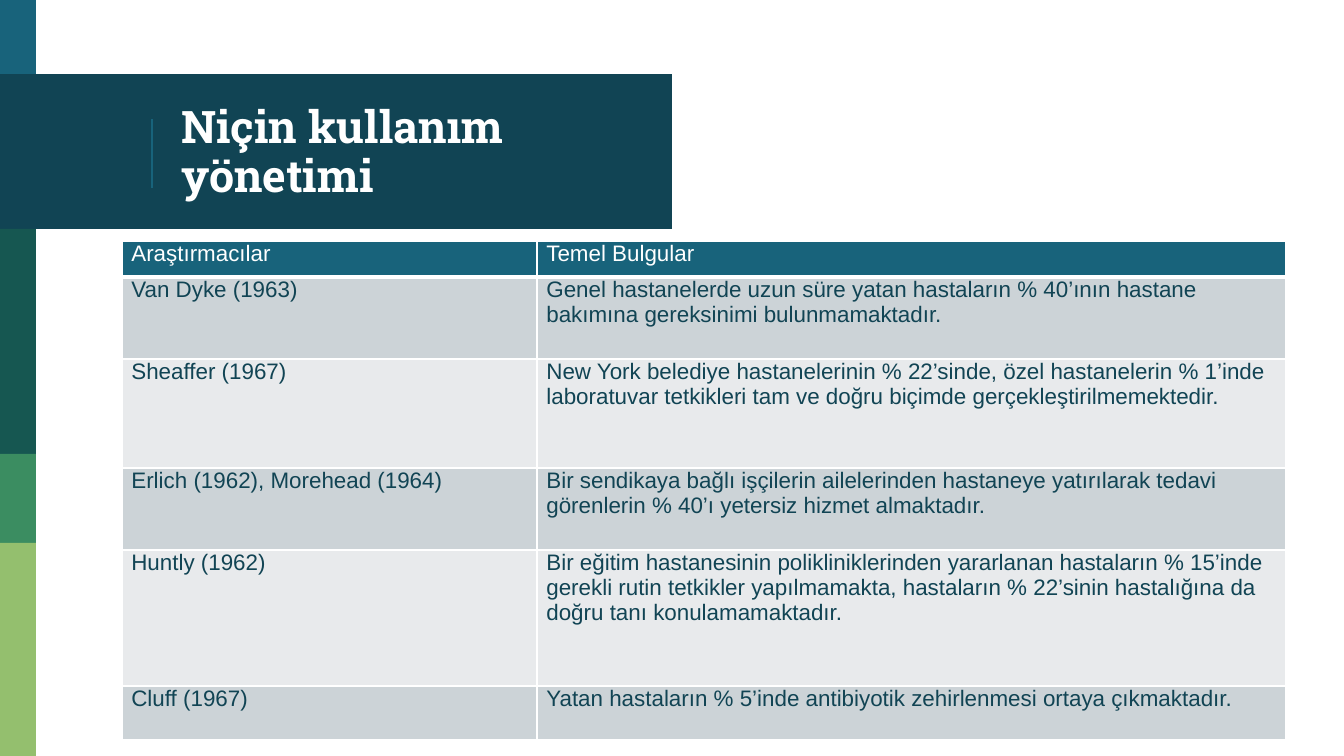
from lxml import etree
from pptx import Presentation
from pptx import util as u
from pptx.dml.color import RGBColor
from pptx.enum import shapes, text
from pptx.oxml.ns import qn

BLUE = RGBColor(0x18, 0x63, 0x7B)
NAVY = RGBColor(0x11, 0x44, 0x54)
PINE = RGBColor(0x16, 0x57, 0x51)
GREEN = RGBColor(0x3B, 0x8D, 0x61)
LIME = RGBColor(0x94, 0xBF, 0x6E)
WHITE = RGBColor(0xFF, 0xFF, 0xFF)
BAND_DARK = RGBColor(0xCC, 0xD3, 0xD7)
BAND_LIGHT = RGBColor(0xE8, 0xEA, 0xEC)

# Content
TITLE = "Niçin kullanım yönetimi"
ROWS = [
    ("Araştırmacılar", "Temel Bulgular"),
    ("Van Dyke (1963)",
     "Genel hastanelerde uzun süre yatan hastaların % 40’ının hastane "
     "bakımına gereksinimi bulunmamaktadır."),
    ("Sheaffer (1967)",
     "New York belediye hastanelerinin % 22’sinde, özel hastanelerin % 1’inde "
     "laboratuvar tetkikleri tam ve doğru biçimde gerçekleştirilmemektedir."),
    ("Erlich (1962), Morehead (1964)",
     "Bir sendikaya bağlı işçilerin ailelerinden hastaneye yatırılarak tedavi "
     "görenlerin % 40’ı yetersiz hizmet almaktadır."),
    ("Huntly (1962)",
     "Bir eğitim hastanesinin polikliniklerinden yararlanan hastaların % 15’inde "
     "gerekli rutin tetkikler yapılmamakta, hastaların % 22’sinin hastalığına da "
     "doğru tanı konulamamaktadır."),
    ("Cluff (1967)",
     "Yatan hastaların % 5’inde antibiyotik zehirlenmesi ortaya çıkmaktadır."),
]
COL_WIDTHS = [415, 749]
ROW_HEIGHTS = [36, 82, 109, 82, 136, 54]
# Left, top, width, height, colour
BARS = [
    (0, 0, 36, 78, BLUE),
    (0, 74, 672, 155, NAVY),
    (0, 229, 36, 225, PINE),
    (0, 454, 36, 89, GREEN),
    (0, 543, 36, 213, LIME),
]


def px(n):
    return u.Emu(round(n * 914400 / 134.4))


def set_font(p, name, size, color, bold=False):
    for r in p.runs:
        r.font.name, r.font.size, r.font.bold = name, u.Pt(size), bold
        r.font.color.rgb = color


def set_borders(cell, bottom):
    tcPr = cell._tc.get_or_add_tcPr()
    widths = {"a:lnL": 1, "a:lnR": 1, "a:lnT": 1, "a:lnB": bottom}
    for i, (tag, width) in enumerate(widths.items()):
        ln = etree.Element(qn(tag), w=str(u.Pt(width)))
        fill = etree.SubElement(ln, qn("a:solidFill"))
        etree.SubElement(fill, qn("a:srgbClr"), val=str(WHITE))
        tcPr.insert(i, ln)


prs = Presentation()
prs.slide_width, prs.slide_height = px(1344), px(756)
s = prs.slides.add_slide(prs.slide_layouts[6])

# Side bars and title band
for x, y, w, h, color in BARS:
    sp = s.shapes.add_shape(shapes.MSO_SHAPE.RECTANGLE, px(x), px(y), px(w), px(h))
    sp.shadow.inherit = False
    sp.fill.solid()
    sp.fill.fore_color.rgb = color
    sp.line.fill.background()

# Rule beside the title
rule = s.shapes.add_connector(shapes.MSO_CONNECTOR.STRAIGHT,
                              px(152), px(119), px(152), px(188))
rule.line.color.rgb = BLUE
rule.line.width = u.Pt(0.75)
etree.SubElement(rule._element.spPr, qn("a:effectLst"))

# Title
tf = s.shapes.add_textbox(px(168), px(78), px(515), px(151)).text_frame
tf.word_wrap = True
tf.vertical_anchor = text.MSO_ANCHOR.MIDDLE
tf.margin_left = tf.margin_right = tf.margin_top = tf.margin_bottom = u.Inches(0.1)
tf.text = TITLE
tf.paragraphs[0].line_spacing = 0.9
set_font(tf.paragraphs[0], "Roboto Slab", 24, WHITE, bold=True)

# Findings table
table = s.shapes.add_table(len(ROWS), len(COL_WIDTHS), px(122), px(241),
                           px(sum(COL_WIDTHS)), px(sum(ROW_HEIGHTS))).table
for col, w in zip(table.columns, COL_WIDTHS):
    col.width = px(w)
for i, (row, h) in enumerate(zip(ROWS, ROW_HEIGHTS)):
    table.rows[i].height = px(h)
    header = i == 0
    for j, value in enumerate(row):
        cell = table.cell(i, j)
        cell.margin_left = cell.margin_right = u.Inches(0.07)
        cell.margin_top = cell.margin_bottom = 0
        cell.fill.solid()
        cell.fill.fore_color.rgb = BLUE if header else BAND_DARK if i % 2 else BAND_LIGHT
        set_borders(cell, bottom=3 if header else 1)
        p = cell.text_frame.paragraphs[0]
        p.text = value
        if j == 0 and i != 3:
            p.alignment = text.PP_ALIGN.JUSTIFY
        set_font(p, "Arial", 12, WHITE if header else NAVY)

prs.save("out.pptx")
